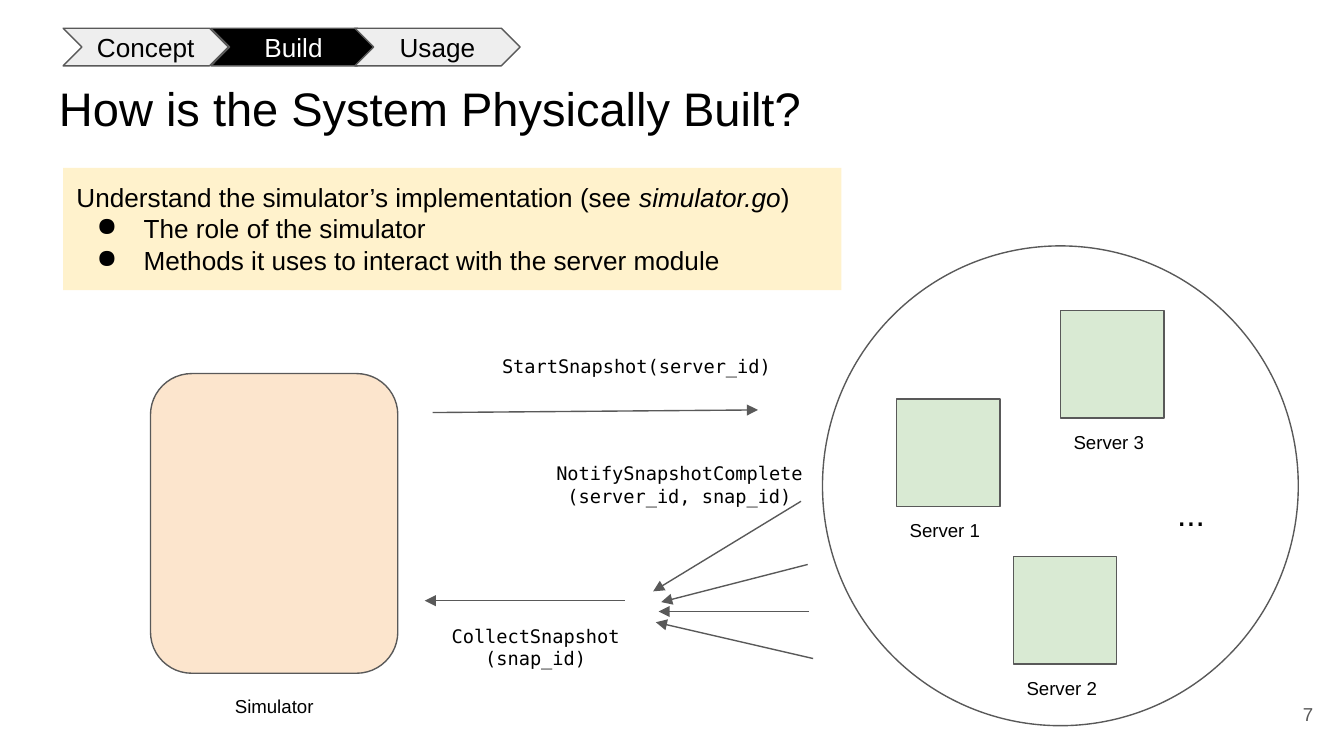
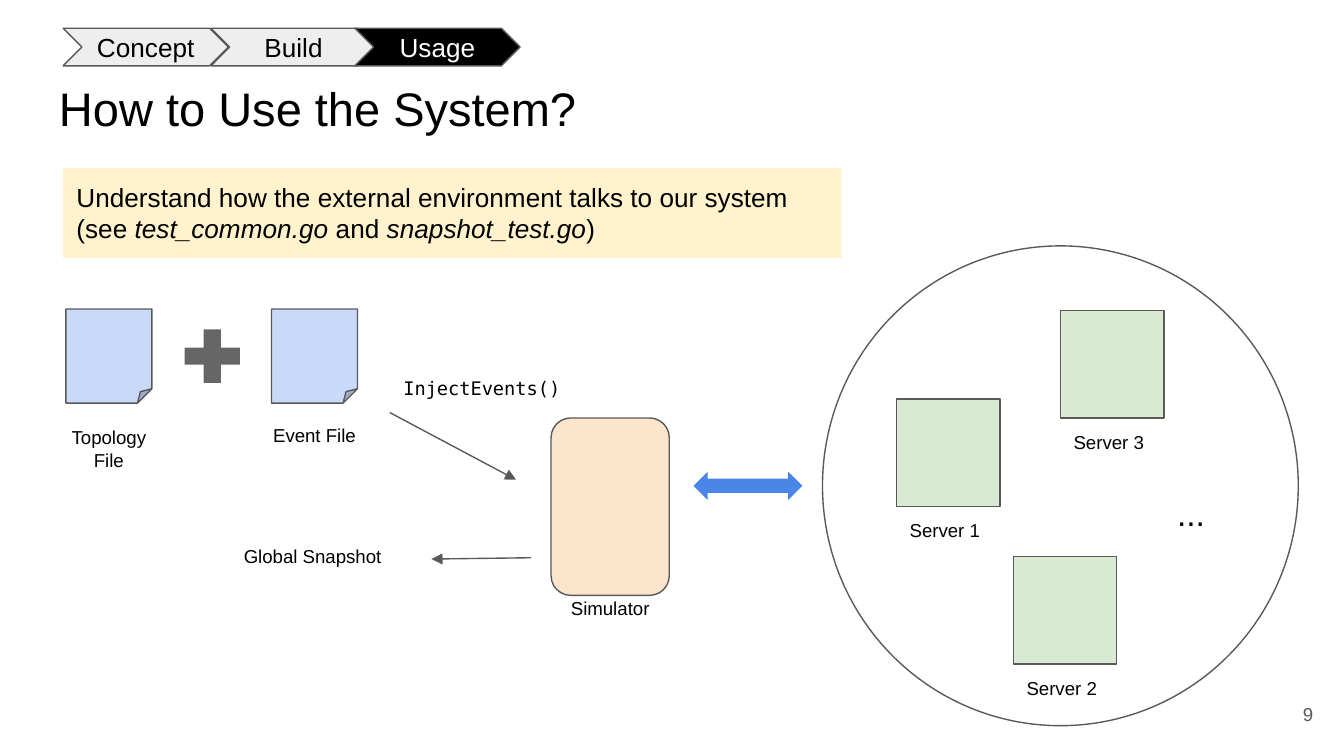
from dataclasses import dataclass

from lxml import etree
from pptx import Presentation
from pptx.dml.color import RGBColor
from pptx.enum.shapes import MSO_CONNECTOR, MSO_SHAPE
from pptx.enum.text import MSO_ANCHOR, MSO_AUTO_SIZE, PP_ALIGN
from pptx.oxml.ns import qn
from pptx.util import Inches, Pt

LEFT, CENTER, RIGHT = PP_ALIGN.LEFT, PP_ALIGN.CENTER, PP_ALIGN.RIGHT
TOP, MIDDLE = MSO_ANCHOR.TOP, MSO_ANCHOR.MIDDLE
GROW, FIXED = MSO_AUTO_SIZE.SHAPE_TO_FIT_TEXT, MSO_AUTO_SIZE.NONE
RECTANGLE, ELLIPSE = MSO_SHAPE.RECTANGLE, MSO_SHAPE.OVAL
ROUNDED_BOX = MSO_SHAPE.FLOWCHART_ALTERNATE_PROCESS
CHEVRON, FILE_SHEET = MSO_SHAPE.CHEVRON, MSO_SHAPE.FOLDED_CORNER
PLUS, DOUBLE_ARROW = MSO_SHAPE.MATH_PLUS, MSO_SHAPE.LEFT_RIGHT_ARROW
STRAIGHT = MSO_CONNECTOR.STRAIGHT

BULLET = "● "
STAGES = {"Concept": 0.47, "Build": 1.57, "Usage": 2.64}
SERVERS = {"Server 1": (6.67, 2.97), "Server 3": (7.89, 2.31), "Server 2": (7.54, 4.14)}


@dataclass(frozen=True)
class Theme:
    sans: str = "Arial"
    mono: str = "DejaVu Sans Mono"
    title_size: float = 25.2
    dots_size: float = 18
    body_size: float = 14
    label_size: float = 10
    line_width: float = 0.75
    inset: float = 0.1
    black: str = "000000"
    white: str = "FFFFFF"
    outline: str = "595959"
    stage: str = "EEEEEE"
    callout: str = "FFF2CC"
    server: str = "D9EAD3"
    simulator: str = "FCE5CD"
    file: str = "C9DAF8"
    plus: str = "666666"
    exchange: str = "4A86E8"


class Deck:
    def __init__(self, theme):
        self.theme = theme
        self.presentation = Presentation()
        self.presentation.slide_width = Inches(10)
        self.presentation.slide_height = Inches(5.625)
        self.slide = None
        self.shapes = None

    def add_slide(self, title, active_stage, number):
        """Start a slide with its title, progress chevrons and page number."""
        theme = self.theme
        self.slide = self.presentation.slides.add_slide(self.presentation.slide_layouts[6])
        self.end_group()
        self.text((0.34, 0.49, 9.32, 0.63), [title], theme.title_size, auto_size=FIXED)
        for stage, left in STAGES.items():
            active = stage == active_stage
            chevron = self.shape(CHEVRON, (left, 0.21, 1.23, 0.28),
                                 theme.black if active else theme.stage)
            self.fill_text(chevron, [stage], theme.body_size, align=CENTER, anchor=MIDDLE,
                           color=theme.white if active else theme.black)
        self.text((9.27, 5.1, 0.6, 0.43), [str(number)], align=RIGHT, anchor=MIDDLE,
                  color=theme.outline, auto_size=FIXED)

    def start_group(self):
        self.shapes = self.slide.shapes.add_group_shape().shapes

    def end_group(self):
        self.shapes = self.slide.shapes

    def shape(self, kind, box, fill=None, outlined=True):
        shape = self.shapes.add_shape(kind, *map(Inches, box))
        shape.shadow.inherit = False
        if fill:
            shape.fill.solid()
            shape.fill.fore_color.rgb = RGBColor.from_string(fill)
        else:
            shape.fill.background()
        if outlined:
            self.outline(shape.line)
        else:
            shape.line.fill.background()
        return shape

    def outline(self, line):
        line.color.rgb = RGBColor.from_string(self.theme.outline)
        line.width = Pt(self.theme.line_width)

    def text(self, box, lines, size=None, auto_size=GROW, **style):
        text_box = self.shapes.add_textbox(*map(Inches, box))
        self.fill_text(text_box, lines, size, auto_size=auto_size, **style)

    def fill_text(self, shape, lines, size=None, font=None, color=None, align=LEFT,
                  anchor=TOP, auto_size=FIXED):
        """Fill a shape with paragraphs; *stars* mark italics, a leading dot a bullet."""
        theme = self.theme
        frame = shape.text_frame
        frame.word_wrap = True
        frame.auto_size = auto_size
        frame.vertical_anchor = anchor
        frame.margin_left = frame.margin_right = Inches(theme.inset)
        frame.margin_top = frame.margin_bottom = Inches(theme.inset)
        for index, line in enumerate(lines):
            paragraph = frame.add_paragraph() if index else frame.paragraphs[0]
            paragraph.alignment = align
            if line.startswith(BULLET):
                self.bullet(paragraph)
            for position, part in enumerate(line.removeprefix(BULLET).split("*")):
                if not part:
                    continue
                run = paragraph.add_run()
                run.text = part
                run.font.name = font or theme.sans
                run.font.size = Pt(size or theme.label_size)
                run.font.italic = position % 2 == 1
                run.font.color.rgb = RGBColor.from_string(color or theme.black)

    def bullet(self, paragraph):
        properties = paragraph._p.get_or_add_pPr()
        properties.set("marL", str(Inches(0.5)))
        properties.set("indent", str(Inches(-0.35)))
        color = etree.SubElement(properties, qn("a:buClr"))
        etree.SubElement(color, qn("a:srgbClr"), val=self.theme.black)
        etree.SubElement(properties, qn("a:buChar"), char=BULLET.strip())

    def label(self, box, *lines):
        self.text(box, lines, align=CENTER)

    def code(self, box, *lines):
        self.text(box, lines, align=CENTER, font=self.theme.mono)

    def callout(self, height, *lines):
        box = self.shape(RECTANGLE, (0.47, 1.25, 5.79, height), self.theme.callout,
                         outlined=False)
        self.fill_text(box, lines, self.theme.body_size, auto_size=GROW)

    def arrow(self, start, end):
        connector = self.shapes.add_connector(STRAIGHT, *map(Inches, (*start, *end)))
        self.outline(connector.line)
        properties = connector._element.spPr
        etree.SubElement(properties.find(qn("a:ln")), qn("a:tailEnd"), type="triangle")
        etree.SubElement(properties, qn("a:effectLst"))

    def server_cluster(self):
        self.start_group()
        self.shape(ELLIPSE, (6.12, 1.83, 3.54, 3.57))
        for name, (left, top) in SERVERS.items():
            self.shape(RECTANGLE, (left, top, 0.77, 0.8), self.theme.server)
            self.text((left, top + 0.81, 0.77, 0.37), [name])
        self.text((8.66, 3.57, 0.77, 0.5), ["..."], self.theme.dots_size)
        self.end_group()

    def simulator(self, box, label_left, label_top):
        self.shape(ROUNDED_BOX, box, self.theme.simulator)
        self.label((label_left, label_top, 0.94, 0.37), "Simulator")

    def file_sheet(self, left, name, label_height):
        self.shape(FILE_SHEET, (left, 2.3, 0.64, 0.7), self.theme.file)
        self.label((left - 0.15, 3.07, 0.94, label_height), name)


def build_slide(deck):
    deck.add_slide("How is the System Physically Built?", "Build", 7)
    deck.callout(0.91, "Understand the simulator’s implementation (see *simulator.go*)",
                 BULLET + "The role of the simulator",
                 BULLET + "Methods it uses to interact with the server module")
    deck.server_cluster()
    deck.simulator((1.12, 2.78, 1.84, 2.23), 1.57, 5.09)

    deck.start_group()
    deck.arrow((3.22, 3.07), (5.64, 3.05))
    deck.code((3.16, 2.56, 3.15, 0.37), "StartSnapshot(server_id)")

    deck.start_group()
    deck.code((3.48, 3.34, 3.15, 0.54), "NotifySnapshotComplete", "(server_id, snap_id)")
    for start, end in (((5.96, 3.73), (4.86, 4.4)), ((6.01, 4.2), (4.92, 4.48)),
                       ((6.02, 4.55), (4.9, 4.55)), ((6.05, 4.9), (4.88, 4.63))):
        deck.arrow(start, end)

    deck.start_group()
    deck.code((2.83, 4.55, 2.31, 0.54), "CollectSnapshot", "(snap_id)")
    deck.arrow((4.65, 4.47), (3.16, 4.47))
    deck.end_group()


def usage_slide(deck):
    deck.add_slide("How to Use the System?", "Usage", 9)
    deck.callout(0.67, "Understand how the external environment talks to our system",
                 "(see *test_common.go* and *snapshot_test.go*)")
    deck.server_cluster()
    deck.simulator((4.1, 3.11, 0.88, 1.32), 4.07, 4.36)
    deck.shape(DOUBLE_ARROW, (5.16, 3.51, 0.81, 0.21), deck.theme.exchange, outlined=False)

    deck.start_group()
    deck.file_sheet(0.49, "Topology File", 0.54)
    deck.file_sheet(2.02, "Event File", 0.37)
    deck.shape(PLUS, (1.3, 2.38, 0.56, 0.54), deck.theme.plus, outlined=False)
    deck.end_group()

    deck.code((2.72, 2.72, 1.73, 0.37), "InjectEvents()")
    deck.arrow((2.9, 3.07), (3.84, 3.57))
    deck.arrow((3.95, 4.15), (3.21, 4.16))
    deck.label((1.43, 3.97, 1.79, 0.37), "Global Snapshot")


def main():
    deck = Deck(Theme())
    build_slide(deck)
    usage_slide(deck)
    deck.presentation.save("out.pptx")


if __name__ == "__main__":
    main()
